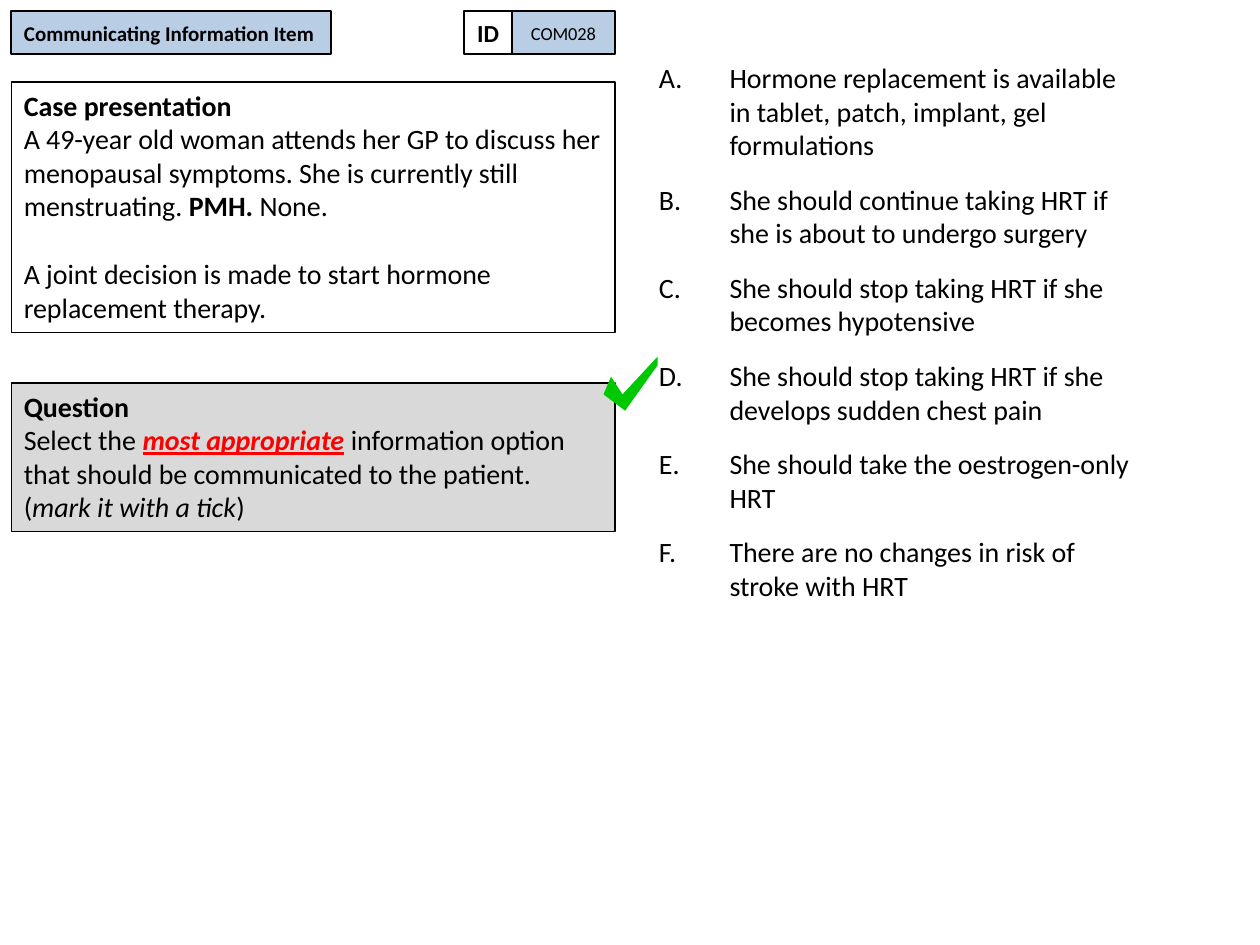
from collections import namedtuple

from lxml.etree import SubElement
from pptx import Presentation
from pptx.dml.color import RGBColor
from pptx.enum.shapes import MSO_SHAPE
from pptx.enum.text import MSO_ANCHOR, MSO_AUTO_SIZE, PP_ALIGN
from pptx.oxml.ns import qn
from pptx.util import Inches, Pt

COLORS = {"text": "000000", "line": "000000", "header": "B9CDE5", "question": "D9D9D9",
          "emphasis": "FF0000", "tick": "00C800"}
CELL = Inches(0.1)
LINE_OF_TEXT = 19.5
OPTIONS = [
    "Hormone replacement is available in tablet, patch, implant, gel formulations",
    "She should continue taking HRT if she is about to undergo surgery",
    "She should stop taking HRT if she becomes hypotensive",
    "She should stop taking HRT if she develops sudden chest pain",
    "She should take the oestrogen-only HRT",
    "There are no changes in risk of stroke with HRT",
]
TICK_OUTLINE = [(0.14, 0.37), (0, 0.7), (0.4, 1), (1, 0.16), (1, 0), (0.35, 0.7)]
Box = namedtuple("Box", "left top width height")


def grid_box(column, row, columns, rows):
    """Turn grid columns and rows into a box of lengths."""
    return Box(*(round(count * CELL) for count in (column, row, columns, rows)))


def column_share(box, start, share):
    """Return the part of a box that covers a share of its width."""
    return Box(box.left + round(box.width * start), box.top, round(box.width * share), box.height)


def place(shape, box):
    """Move and size a shape to fill a box."""
    shape.left, shape.top, shape.width, shape.height = box


def add_text(paragraph, text, size=16, color="text", bold=False, italic=False, underline=False):
    """Add one formatted run to a paragraph."""
    run = paragraph.add_run()
    run.text = text
    font = run.font
    font.name, font.size = "Calibri", Pt(size)
    font.bold, font.italic, font.underline = bold, italic, underline
    font.color.rgb = RGBColor.from_string(COLORS[color])


def style_panel(shape, fill=None, line_width=0.75, anchor=MSO_ANCHOR.TOP):
    """Give a rectangle its fill, outline and text frame settings."""
    if fill:
        shape.fill.solid()
        shape.fill.fore_color.rgb = RGBColor.from_string(COLORS[fill])
    else:
        shape.fill.background()
    shape.line.color.rgb = RGBColor.from_string(COLORS["line"])
    shape.line.width = Pt(line_width)
    shape.text_frame.word_wrap = True
    shape.text_frame.auto_size = MSO_AUTO_SIZE.NONE
    shape.text_frame.vertical_anchor = anchor


def add_panel(slide, box, **style):
    """Add a styled rectangle and return its text frame."""
    shape = slide.shapes.add_shape(MSO_SHAPE.RECTANGLE, *box)
    shape.shadow.inherit = False
    style_panel(shape, **style)
    return shape.text_frame


def fill_header(slide, box):
    """Place the item type and its identifier across the box."""
    style = {"line_width": 1, "anchor": MSO_ANCHOR.MIDDLE}
    title = slide.shapes.title
    place(title, column_share(box, 0, 0.53))
    style_panel(title, fill="header", **style)
    paragraph = title.text_frame.paragraphs[0]
    paragraph.alignment = PP_ALIGN.LEFT
    add_text(paragraph, "Communicating Information Item", size=12, bold=True)
    labels = [("COM028", 0.83, 0.17, "header", 10.5, False), ("ID", 0.75, 0.08, None, 14, True)]
    for text, start, share, fill, size, bold in labels:
        frame = add_panel(slide, column_share(box, start, share), fill=fill, **style)
        paragraph = frame.paragraphs[0]
        paragraph.alignment = PP_ALIGN.CENTER
        add_text(paragraph, text, size=size, bold=bold)


def fill_section(slide, box, heading, paragraphs, fill=None):
    """Place a bordered section with a bold heading over paragraphs of runs."""
    frame = add_panel(slide, box, fill=fill)
    frame.paragraphs[0].alignment = PP_ALIGN.LEFT
    add_text(frame.paragraphs[0], heading, bold=True)
    for space_before, runs in paragraphs:
        paragraph = frame.add_paragraph()
        paragraph.alignment = PP_ALIGN.LEFT
        paragraph.space_before = Pt(space_before)
        for text, style in runs:
            add_text(paragraph, text, **style)


def fill_options(slide, box):
    """Place the lettered answer options in the body placeholder."""
    body = slide.placeholders[1]
    place(body, box)
    frame = body.text_frame
    frame.auto_size = MSO_AUTO_SIZE.NONE
    for index, option in enumerate(OPTIONS):
        paragraph = frame.add_paragraph() if index else frame.paragraphs[0]
        paragraph.space_before = Pt(12)
        add_text(paragraph, option)
        properties = paragraph._p.get_or_add_pPr()
        properties.set("marL", str(Inches(0.56)))
        properties.set("indent", str(-Inches(0.56)))
        SubElement(properties, qn("a:buFont"), typeface="+mj-lt")
        SubElement(properties, qn("a:buAutoNum"), type="alphaUcPeriod")


def draw_tick(slide, box):
    """Draw the tick that marks the correct option."""
    points = [(box.left + round(x * box.width), box.top + round(y * box.height))
              for x, y in TICK_OUTLINE]
    builder = slide.shapes.build_freeform(*points[0])
    builder.add_line_segments(points[1:], close=True)
    tick = builder.convert_to_shape()
    tick.shadow.inherit = False
    tick.fill.solid()
    tick.fill.fore_color.rgb = RGBColor.from_string(COLORS["tick"])
    tick.line.fill.background()


def main():
    """Build the question slide and save it."""
    presentation = Presentation()
    presentation.slide_width, presentation.slide_height = 100 * CELL, 75 * CELL
    slide = presentation.slides.add_slide(presentation.slide_layouts[1])
    fill_options(slide, grid_box(51.3, 4.3, 40.4, 62.7))
    fill_header(slide, grid_box(0.9, 0.9, 47.9, 3.4))
    fill_section(slide, grid_box(0.9, 6.5, 47.9, 19.9), "Case presentation", [
        (0, [("A 49-year old woman attends her GP to discuss her menopausal symptoms. "
              "She is currently still menstruating. ", {}),
             ("PMH.", {"bold": True}), (" None.", {})]),
        (LINE_OF_TEXT, [("A joint decision is made to start hormone replacement therapy.", {})]),
    ])
    emphasis = {"color": "emphasis", "bold": True, "italic": True, "underline": True}
    fill_section(slide, grid_box(0.9, 30.4, 47.9, 11.8), "Question", [
        (0, [("Select the ", {}), ("most appropriate", emphasis),
             (" information option that should be communicated to the patient.", {})]),
        (0, [("(", {}), ("mark it with a tick", {"italic": True}), (")", {})]),
    ], fill="question")
    draw_tick(slide, grid_box(47.9, 28.3, 4.3, 4.3))
    presentation.save("out.pptx")


if __name__ == "__main__":
    main()
